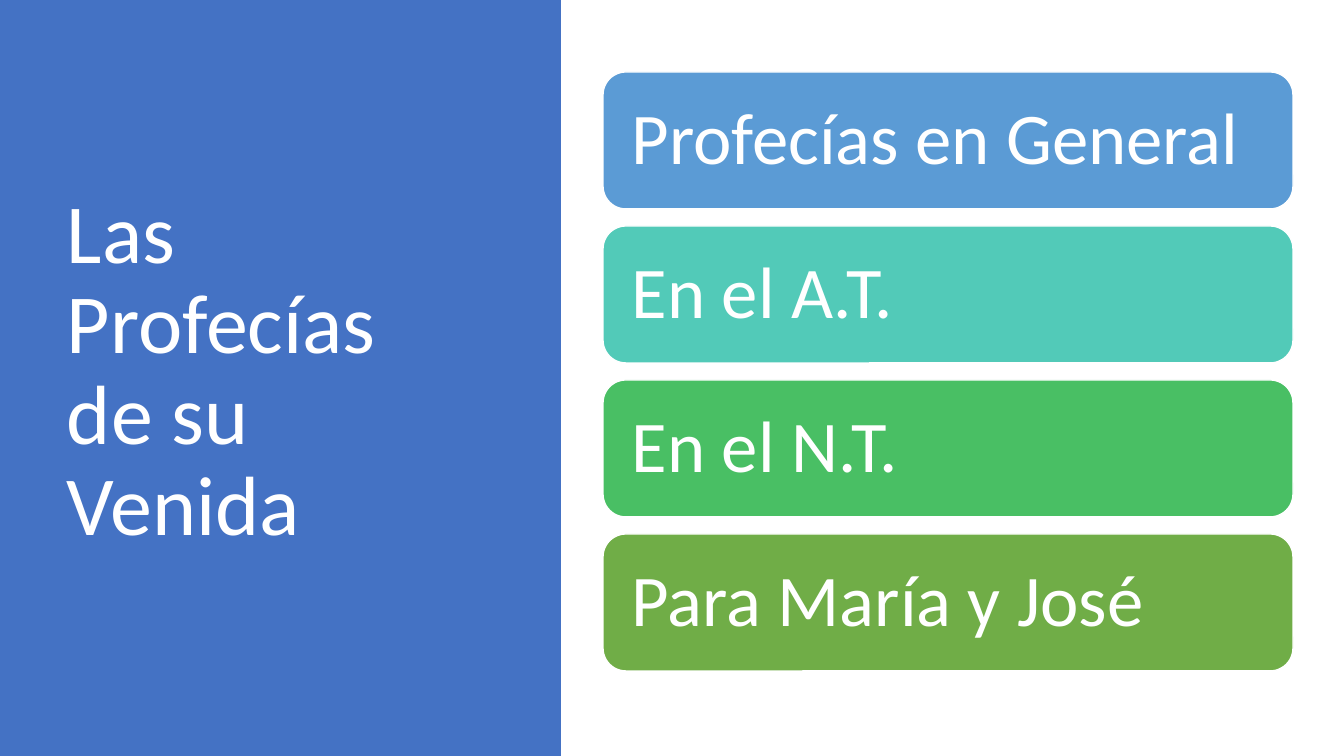
from pptx import Presentation
from pptx.dml.color import RGBColor
from pptx.enum import shapes, text
from pptx.util import Pt

# Content
TITLE = "Las Profecías de su Venida"
TOPICS = [
    ("Profecías en General", "5B9BD5"),
    ("En el A.T.", "52CAB8"),
    ("En el N.T.", "49BF64"),
    ("Para María y José", "70AD47"),
]
WHITE, BLUE = "FFFFFF", "4472C4"

# Layout in px
SLIDE_W, SLIDE_H = 1344, 756
PANEL_W = 561
TITLE_BOX = (57, 69, 420, 606)
CARD_X, CARD_Y, CARD_W, CARD_H, CARD_STEP = 603, 72, 690, 137, 154
CARD_INSET = 22


def px(n):
    return round(n * 914400 / 100.8)


def color(hex_code):
    return RGBColor.from_string(hex_code)


def add_block(slide, kind, box, fill):
    sp = slide.shapes.add_shape(kind, *map(px, box))
    sp.shadow.inherit = False
    sp.fill.solid()
    sp.fill.fore_color.rgb = color(fill)
    sp.line.fill.background()
    return sp


def write(sp, words, size, inset_x, inset_y):
    tf = sp.text_frame
    tf.word_wrap = True
    tf.vertical_anchor = text.MSO_ANCHOR.MIDDLE
    tf.margin_left = tf.margin_right = px(inset_x)
    tf.margin_top = tf.margin_bottom = px(inset_y)
    p = tf.paragraphs[0]
    p.text = words
    p.alignment = text.PP_ALIGN.LEFT
    p.line_spacing = 0.9
    p.font.name = "Calibri"
    p.font.size = Pt(size)
    p.font.color.rgb = color(WHITE)


prs = Presentation()
prs.slide_width, prs.slide_height = px(SLIDE_W), px(SLIDE_H)
slide = prs.slides.add_slide(prs.slide_layouts[6])

# Left panel with title
add_block(slide, shapes.MSO_SHAPE.RECTANGLE, (0, 0, PANEL_W, SLIDE_H), BLUE)
write(slide.shapes.add_textbox(*map(px, TITLE_BOX)), TITLE, 60, 10, 5)

# Topic cards
for i, (topic, fill) in enumerate(TOPICS):
    box = (CARD_X, CARD_Y + i * CARD_STEP, CARD_W, CARD_H)
    card = add_block(slide, shapes.MSO_SHAPE.ROUNDED_RECTANGLE, box, fill)
    card.line.color.rgb = color(WHITE)
    card.line.width = Pt(1)
    write(card, topic, 52, CARD_INSET, CARD_INSET)

prs.save("out.pptx")
